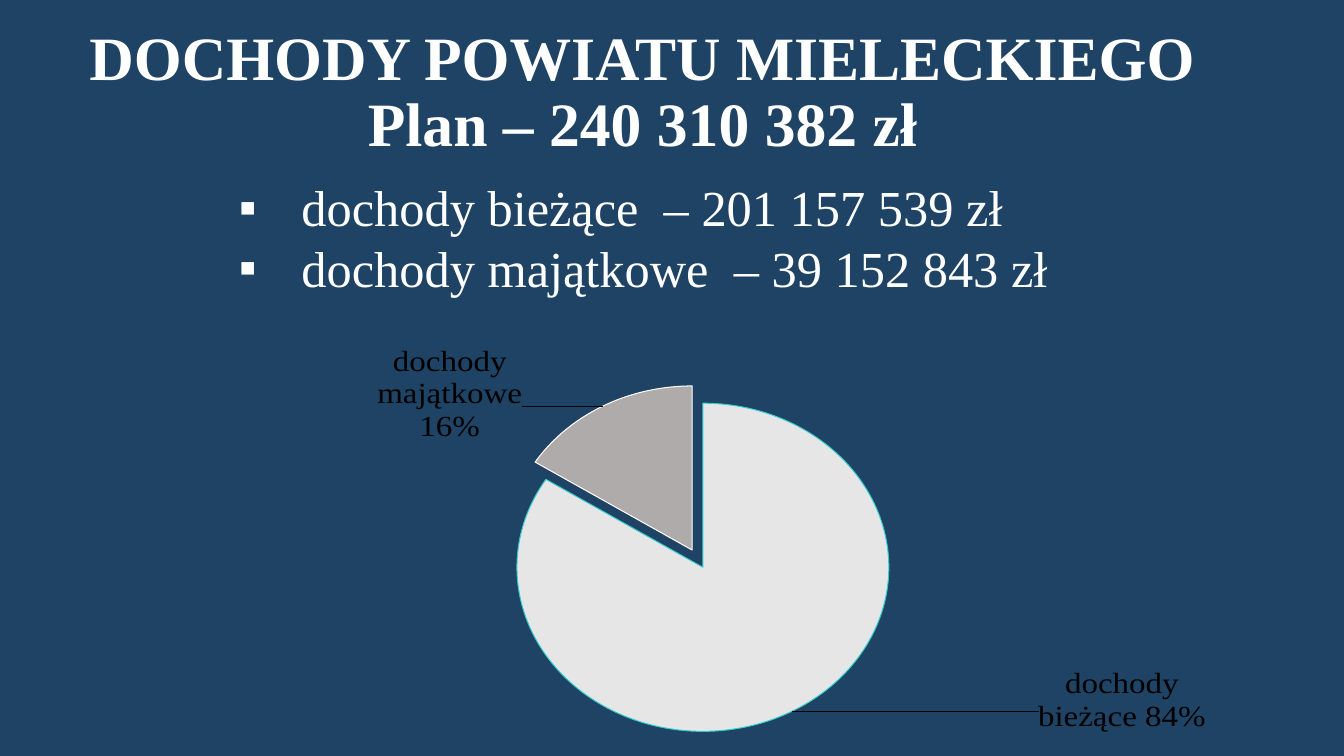
from dataclasses import dataclass

from pptx import Presentation
from pptx.chart.data import CategoryChartData
from pptx.dml.color import RGBColor
from pptx.enum.chart import XL_CHART_TYPE, XL_LABEL_POSITION
from pptx.enum.text import MSO_ANCHOR, MSO_AUTO_SIZE, PP_ALIGN
from pptx.oxml import parse_xml
from pptx.oxml.ns import nsdecls, qn
from pptx.util import Inches, Pt


@dataclass(frozen=True)
class Theme:
    back: str = "1E4364"
    light: str = "FFFFFF"
    dark: str = "000000"
    font: str = "Times New Roman"
    title: int = 44
    body: int = 36
    label: int = 24


@dataclass(frozen=True)
class Box:
    left: float
    top: float
    width: float
    height: float


@dataclass(frozen=True)
class Slice:
    name: str
    share: int
    fill: str
    line: str
    shift: tuple[float, float]


THEME = Theme()
TITLE = Box(0, 0.22, 12.75, 1.06)
LIST = Box(2.27, 1.7, 8.63, 1.31)
CHART = Box(2.15, 3.01, 9.81, 4.74)
PIE = Box(2.83, 0.74, 4, 4)
SLICES = [
    Slice("dochody bieżące", 84, "E7E6E6", "33CCCC", (0.25, -0.1)),
    Slice("dochody majątkowe", 16, "AFABAB", "FFFFFF", (-0.08, 0.1)),
]


def color(code: str) -> RGBColor:
    return RGBColor.from_string(code)


def style(font, size: int, code: str, bold: bool = False) -> None:
    font.name, font.size, font.bold = THEME.font, Pt(size), bold
    font.color.rgb = color(code)


def place(shape, box: Box) -> None:
    shape.left, shape.top = Inches(box.left), Inches(box.top)
    shape.width, shape.height = Inches(box.width), Inches(box.height)


def write(shape, lines: list[str], *, size: int, bold: bool = False,
          align=PP_ALIGN.LEFT, spacing: float = 1.0, before: int = 0,
          bullet: str = "", indent: float = 0) -> None:
    frame = shape.text_frame
    frame.word_wrap = True
    frame.auto_size = MSO_AUTO_SIZE.NONE
    frame.vertical_anchor = MSO_ANCHOR.TOP
    frame.text = "\n".join(lines)
    for para in frame.paragraphs:
        para.alignment, para.line_spacing = align, spacing
        para.space_before = Pt(before)
        for run in para.runs:
            style(run.font, size, THEME.light, bold)
        if bullet:
            props = para._p.get_or_add_pPr()
            props.set("marL", str(Inches(indent)))
            props.set("indent", str(-Inches(indent)))
            props.append(parse_xml(f'<a:buChar {nsdecls("a")} char="{bullet}"/>'))


def layout(**parts: object):
    """Build a manual chart layout from its named parts."""
    inner = "".join(f'<c:{key} val="{val}"/>' for key, val in parts.items())
    return parse_xml(f'<c:layout {nsdecls("c")}><c:manualLayout>{inner}'
                     '</c:manualLayout></c:layout>')


def mark(point, part: Slice) -> None:
    """Colour one slice and label it with its name and percentage."""
    point.format.fill.solid()
    point.format.fill.fore_color.rgb = color(part.fill)
    point.format.line.color.rgb = color(part.line)
    point.format.line.width = Pt(0.75)
    label = point.data_label
    style(label.font, THEME.label, THEME.dark)
    label.position = XL_LABEL_POSITION.OUTSIDE_END
    node = label._dLbl
    for key, val in (("Val", 0), ("CatName", 1), ("Percent", 1)):
        node.find(qn(f"c:show{key}")).set("val", str(val))
    node.append(parse_xml(f'<c:separator {nsdecls("c")}> </c:separator>'))
    node.insert(1, layout(x=part.shift[0], y=part.shift[1]))


def draw_pie(slide) -> None:
    data = CategoryChartData()
    data.categories = [part.name for part in SLICES]
    data.add_series("Dochody", [part.share for part in SLICES])
    spot = [Inches(n) for n in (CHART.left, CHART.top, CHART.width, CHART.height)]
    chart = slide.shapes.add_chart(XL_CHART_TYPE.PIE, *spot, data).chart
    chart.has_title = chart.has_legend = False
    style(chart.font, THEME.label, THEME.dark)
    plot = chart.plots[0]
    plot.vary_by_categories = True
    series = plot.series[0]
    for i, part in enumerate(SLICES):
        mark(series.points[i], part)
    burst = parse_xml(f'<c:explosion {nsdecls("c")} val="6"/>')
    series._element.find(qn("c:dPt")).addprevious(burst)
    area = chart._chartSpace.chart.plotArea
    for old in area.findall(qn("c:layout")):
        area.remove(old)
    area.insert(0, layout(
        layoutTarget="inner", xMode="edge", yMode="edge",
        x=round(PIE.left / CHART.width, 2), y=round(PIE.top / CHART.height, 2),
        w=round(PIE.width / CHART.width, 2), h=round(PIE.height / CHART.height, 2)))


def main() -> None:
    deck = Presentation()
    deck.slide_width, deck.slide_height = Inches(13.33), Inches(7.5)
    slide = deck.slides.add_slide(deck.slide_layouts[1])
    slide.background.fill.solid()
    slide.background.fill.fore_color.rgb = color(THEME.back)
    title, body = slide.placeholders
    place(title, TITLE)
    write(title, ["DOCHODY POWIATU MIELECKIEGO", "Plan – 240 310 382 zł"],
          size=THEME.title, bold=True, align=PP_ALIGN.CENTER, spacing=0.9)
    place(body, LIST)
    write(body, ["dochody bieżące  – 201 157 539 zł",
                 "dochody majątkowe  – 39 152 843 zł"],
          size=THEME.body, bullet="▪", indent=0.62)
    draw_pie(slide)
    deck.save("out.pptx")


if __name__ == "__main__":
    main()
